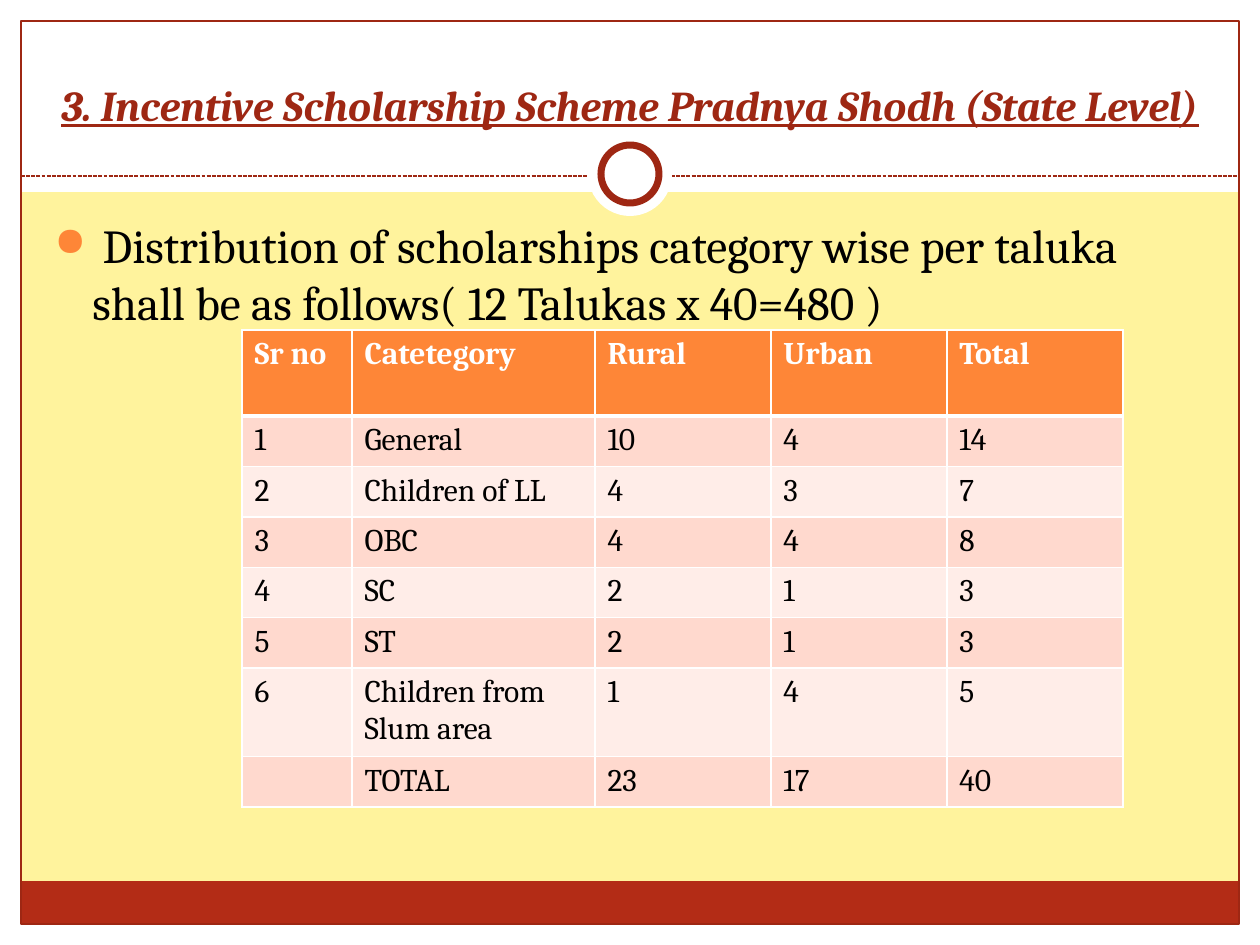
import pptx
import pptx.dml.color
import pptx.enum.dml
import pptx.enum.shapes
import pptx.enum.text
import pptx.oxml
import pptx.oxml.ns
import pptx.util
import lxml.etree

PX = 914400 / 126
FONT = "Cambria"
WHITE, BLACK = "FFFFFF", "000000"
RED, DARK_RED = "B32C16", "9E2713"
ORANGE, YELLOW = "FE8637", "FFF39D"
BANDS = ("FFD9CE", "FFEDE8")

MARGIN, RIGHT, BOTTOM = 21, 1239, 924
PAGE_WIDTH, PAGE_HEIGHT = 1260, 945

COLUMN_WIDTHS = (110, 243, 176, 176, 176)
ROW_HEIGHTS = (86, 50, 50, 50, 50, 50, 86, 50)
ROWS = (
    ("Sr no", "Catetegory", "Rural", "Urban", "Total"),
    ("1", "General", "10", "4", "14"),
    ("2", "Children of LL", "4", "3", "7"),
    ("3", "OBC", "4", "4", "8"),
    ("4", "SC", "2", "1", "3"),
    ("5", "ST", "2", "1", "3"),
    ("6", "Children from Slum area", "1", "4", "5"),
    ("", "TOTAL", "23", "17", "40"),
)


def emu(px):
    return pptx.util.Emu(round(px * PX))


def box(*lengths):
    return [emu(length) for length in lengths]


def color(hex_string):
    return pptx.dml.color.RGBColor.from_string(hex_string)


def paint(fill, hex_string):
    fill.solid()
    fill.fore_color.rgb = color(hex_string)


def set_font(paragraph, size, hex_string, bold=False):
    font = paragraph.font
    font.name = FONT
    font.size = pptx.util.Pt(size)
    font.bold = bold
    font.color.rgb = color(hex_string)


def add_shape(slide, kind, bounds, fill=None, line=None, line_width=0.75):
    shape = slide.shapes.add_shape(kind, *box(*bounds))
    shape.shadow.inherit = False
    if fill:
        paint(shape.fill, fill)
    else:
        shape.fill.background()
    if line:
        shape.line.color.rgb = color(line)
        shape.line.width = pptx.util.Pt(line_width)
    else:
        shape.line.fill.background()


def add_dashed_rule(slide, left, right, y):
    rule = slide.shapes.add_connector(
        pptx.enum.shapes.MSO_CONNECTOR.STRAIGHT, *box(left, y, right, y))
    rule.line.color.rgb = color(DARK_RED)
    rule.line.width = pptx.util.Pt(0.75)
    rule.line.dash_style = pptx.enum.dml.MSO_LINE.SQUARE_DOT
    properties = rule.element.find(pptx.oxml.ns.qn("p:spPr"))
    lxml.etree.SubElement(properties, pptx.oxml.ns.qn("a:effectLst"))


def add_frame(slide):
    """Add the white margins, the bottom bar, the border and the ring."""
    rectangle = pptx.enum.shapes.MSO_SHAPE.RECTANGLE
    oval = pptx.enum.shapes.MSO_SHAPE.OVAL
    for bounds in (
        (0, BOTTOM, PAGE_WIDTH, MARGIN),
        (0, 0, PAGE_WIDTH, 192),
        (0, 0, MARGIN, PAGE_HEIGHT),
        (RIGHT, 0, MARGIN, PAGE_HEIGHT),
    ):
        add_shape(slide, rectangle, bounds, fill=WHITE)
    add_shape(slide, rectangle, (MARGIN, 881, RIGHT - MARGIN, BOTTOM - 881), fill=RED)
    add_shape(slide, rectangle, (MARGIN, MARGIN, RIGHT - MARGIN, BOTTOM - MARGIN),
              line=DARK_RED)
    add_dashed_rule(slide, MARGIN, RIGHT, 176)
    add_shape(slide, oval, (588, 132, 84, 84), fill=WHITE)
    add_shape(slide, oval, (601, 145, 58, 58), fill=WHITE, line=DARK_RED, line_width=4)


def set_title(slide, text):
    title = slide.shapes.title
    title.left, title.top, title.width, title.height = box(42, 32, 1176, 104)
    slide.shapes.element.append(title.element)  # bring in front of the frame
    title.text_frame.text = text
    title.text_frame.vertical_anchor = pptx.enum.text.MSO_ANCHOR.BOTTOM
    title.text_frame.auto_size = pptx.enum.text.MSO_AUTO_SIZE.NONE
    paragraph = title.text_frame.paragraphs[0]
    paragraph.alignment = pptx.enum.text.PP_ALIGN.CENTER
    set_font(paragraph, 24.3, DARK_RED, bold=True)
    paragraph.font.italic = True
    paragraph.font.underline = True


def add_bullet(paragraph, indent):
    properties = paragraph._p.get_or_add_pPr()
    properties.set("marL", str(emu(indent)))
    properties.set("indent", str(emu(-indent)))
    namespace = pptx.oxml.ns.nsdecls("a")
    bullet = (
        f'<a:buClr {namespace}><a:srgbClr val="{ORANGE}"/></a:buClr>',
        f'<a:buSzPct {namespace} val="85000"/>',
        f'<a:buChar {namespace} char="●"/>',
    )
    position = len(properties.findall(pptx.oxml.ns.qn("a:spcBef")))
    for offset, xml in enumerate(bullet):
        properties.insert(position + offset, pptx.oxml.parse_xml(xml))


def add_body(slide, text):
    body = slide.shapes.add_textbox(*box(42, 210, 1172, 630))
    body.text_frame.word_wrap = True
    body.text_frame.text = text
    paragraph = body.text_frame.paragraphs[0]
    paragraph.space_before = pptx.util.Pt(5.4)
    add_bullet(paragraph, 38)
    set_font(paragraph, 27, BLACK)


def set_borders(cell, bottom_width):
    properties = cell._tc.get_or_add_tcPr()
    widths = {"lnL": 1, "lnR": 1, "lnT": 1, "lnB": bottom_width}
    for position, (side, width) in enumerate(widths.items()):
        properties.insert(position, pptx.oxml.parse_xml(
            f'<a:{side} {pptx.oxml.ns.nsdecls("a")} w="{pptx.util.Pt(width)}">'
            f'<a:solidFill><a:srgbClr val="{WHITE}"/></a:solidFill></a:{side}>'))


def add_scholarship_table(slide):
    bounds = box(242, 330, sum(COLUMN_WIDTHS), sum(ROW_HEIGHTS))
    table = slide.shapes.add_table(len(ROWS), len(COLUMN_WIDTHS), *bounds).table
    for column, width in zip(table.columns, COLUMN_WIDTHS):
        column.width = emu(width)
    for index, (row, height, texts) in enumerate(zip(table.rows, ROW_HEIGHTS, ROWS)):
        row.height = emu(height)
        header = index == 0
        for cell, text in zip(row.cells, texts):
            cell.text = text
            paint(cell.fill, ORANGE if header else BANDS[(index - 1) % 2])
            set_borders(cell, bottom_width=3 if header else 1)
            set_font(cell.text_frame.paragraphs[0], 18,
                     WHITE if header else BLACK, bold=header)


def main():
    presentation = pptx.Presentation()
    presentation.slide_width, presentation.slide_height = box(PAGE_WIDTH, PAGE_HEIGHT)
    slide = presentation.slides.add_slide(presentation.slide_layouts[5])
    paint(slide.background.fill, YELLOW)
    add_frame(slide)
    set_title(slide, "3. Incentive Scholarship Scheme Pradnya Shodh (State Level)")
    add_body(slide, " Distribution of scholarships category wise per taluka "
                    "shall be as follows( 12 Talukas x 40=480 )")
    add_scholarship_table(slide)
    presentation.save("out.pptx")


if __name__ == "__main__":
    main()
